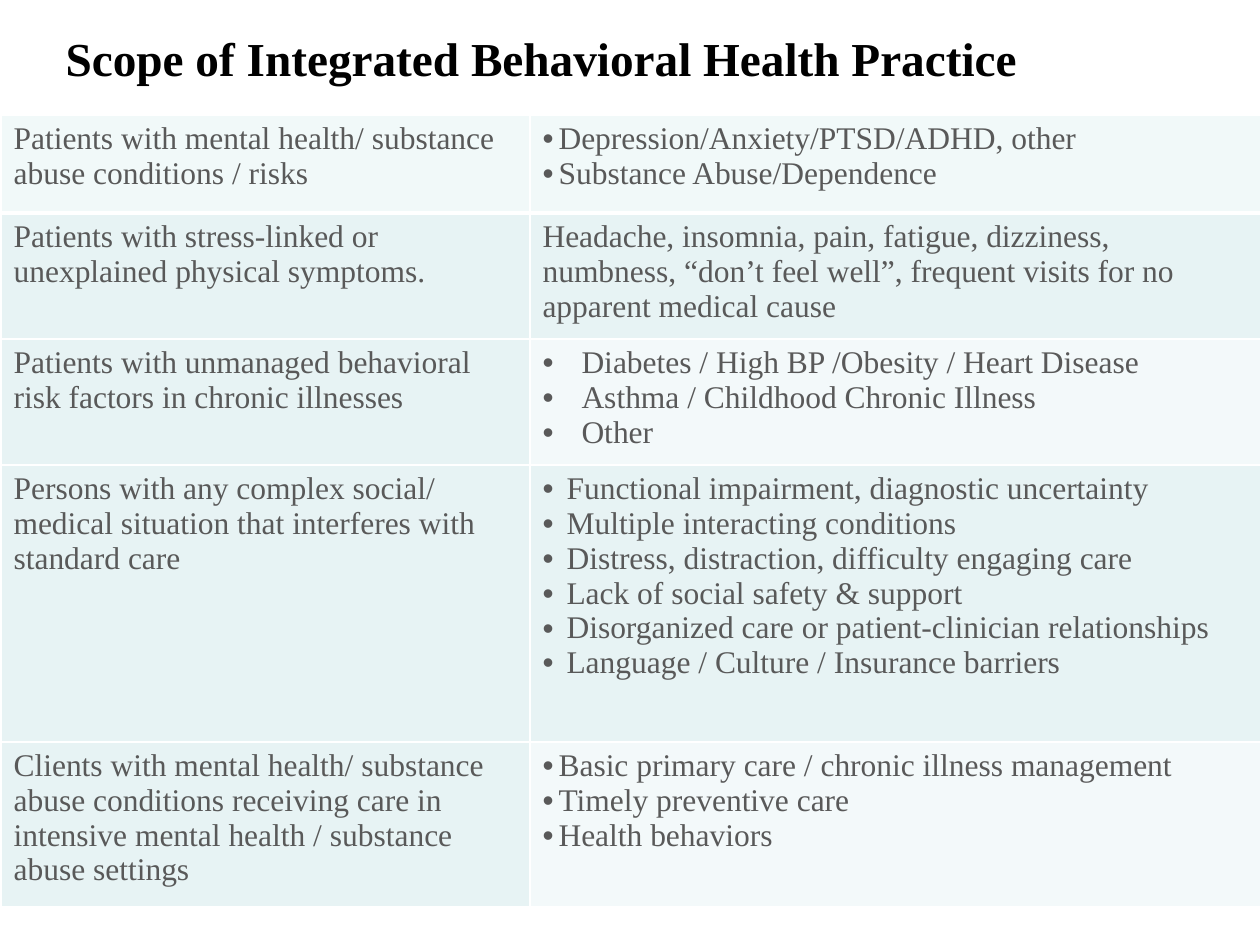
from dataclasses import dataclass

from lxml.etree import SubElement
from pptx import Presentation
from pptx.dml.color import RGBColor
from pptx.enum.text import MSO_ANCHOR, PP_ALIGN
from pptx.oxml import parse_xml
from pptx.oxml.ns import nsdecls, qn
from pptx.util import Emu, Pt

EMU_PER_PX = 914400 / 126
FONT = "Times New Roman"
TEXT_GREY = "595959"
MINT, TEAL, PALE = "F1F9F9", "E7F3F4", "F3F9FA"
BORDER = "FFFFFF"


@dataclass
class ScopeRow:
    height: int
    patients: str
    examples: list[str]
    indent: int  # hanging indent of the bullets, 0 for plain text
    fills: tuple[str, str]


SCOPE_ROWS = [
    ScopeRow(98, "Patients with mental health/ substance abuse conditions / risks",
             ["Depression/Anxiety/PTSD/ADHD, other", "Substance Abuse/Dependence"],
             16, (MINT, MINT)),
    ScopeRow(126, "Patients with stress-linked or unexplained physical symptoms.",
             ["Headache, insomnia, pain, fatigue, dizziness, numbness, “don’t feel well”, "
              "frequent visits for no apparent medical cause"],
             0, (TEAL, TEAL)),
    ScopeRow(126, "Patients with unmanaged behavioral risk factors in chronic illnesses",
             ["Diabetes / High BP /Obesity / Heart Disease",
              "Asthma / Childhood Chronic Illness", "Other"],
             39, (TEAL, PALE)),
    ScopeRow(277, "Persons with any complex social/ medical situation that interferes "
             "with standard care",
             ["Functional impairment, diagnostic uncertainty",
              "Multiple interacting conditions",
              "Distress, distraction, difficulty engaging care",
              "Lack of social safety & support",
              "Disorganized care or patient-clinician relationships",
              "Language / Culture / Insurance barriers"],
             24, (TEAL, TEAL)),
    ScopeRow(165, "Clients with mental health/ substance abuse conditions receiving care "
             "in intensive mental health / substance abuse settings",
             ["Basic primary care / chronic illness management",
              "Timely preventive care", "Health behaviors"],
             16, (TEAL, PALE)),
]
COLUMN_WIDTHS = (529, 732)


def px(length: int) -> Emu:
    return Emu(round(length * EMU_PER_PX))


def color(hex_code: str) -> RGBColor:
    return RGBColor.from_string(hex_code)


def write(paragraph, text: str, size: int, hex_code: str, bold: bool = False) -> None:
    run = paragraph.add_run()
    run.text = text
    for name, value in {"name": FONT, "size": Pt(size), "bold": bold}.items():
        setattr(run.font, name, value)
    run.font.color.rgb = color(hex_code)


def add_bullet(paragraph, indent: int) -> None:
    properties = paragraph._p.get_or_add_pPr()
    properties.set("marL", str(px(indent)))
    properties.set("indent", str(-px(indent)))
    SubElement(properties, qn("a:buFont")).set("typeface", "Arial")
    SubElement(properties, qn("a:buChar")).set("char", "•")


def set_borders(cell, bottom: int) -> None:
    widths = {"lnL": 1, "lnR": 1, "lnT": 1, "lnB": bottom}
    for position, (side, width) in enumerate(widths.items()):
        cell._tc.get_or_add_tcPr().insert(position, parse_xml(
            f'<a:{side} {nsdecls("a")} w="{Pt(width)}"><a:solidFill>'
            f'<a:srgbClr val="{BORDER}"/></a:solidFill></a:{side}>'))


def fill_cell(cell, lines: list[str], indent: int, fill: str, bottom: int) -> None:
    cell.fill.solid()
    cell.fill.fore_color.rgb = color(fill)
    set_borders(cell, bottom)
    frame = cell.text_frame
    for number, line in enumerate(lines):
        paragraph = frame.add_paragraph() if number else frame.paragraphs[0]
        if indent:
            add_bullet(paragraph, indent)
        write(paragraph, line, 18, TEXT_GREY)


def add_title(slide, text: str) -> None:
    title = slide.shapes.title
    place = {"left": 53, "top": -21, "width": 1134, "height": 157}
    for name, value in place.items():
        setattr(title, name, px(value))
    title.text_frame.vertical_anchor = MSO_ANCHOR.MIDDLE
    heading = title.text_frame.paragraphs[0]
    heading.alignment = PP_ALIGN.LEFT
    write(heading, text, 27, "000000", bold=True)


def add_scope_table(slide, rows: list[ScopeRow]) -> None:
    table = slide.shapes.add_table(
        len(rows), len(COLUMN_WIDTHS), px(1), px(115),
        px(sum(COLUMN_WIDTHS)), px(sum(row.height for row in rows))).table
    table.first_row = table.horz_banding = False
    for column, width in zip(table.columns, COLUMN_WIDTHS):
        column.width = px(width)
    for index, row in enumerate(rows):
        table.rows[index].height = px(row.height)
        bottom = 1 if index else 3
        contents = (([row.patients], 0), (row.examples, row.indent))
        for column, (lines, indent) in enumerate(contents):
            fill_cell(table.cell(index, column), lines, indent, row.fills[column], bottom)


def main() -> None:
    deck = Presentation()
    deck.slide_width, deck.slide_height = px(1260), px(945)
    slide = deck.slides.add_slide(deck.slide_layouts[5])  # title only

    # Heading
    add_title(slide, "Scope of Integrated Behavioral Health Practice")

    # Patient groups with their examples
    add_scope_table(slide, SCOPE_ROWS)

    deck.save("out.pptx")


if __name__ == "__main__":
    main()
